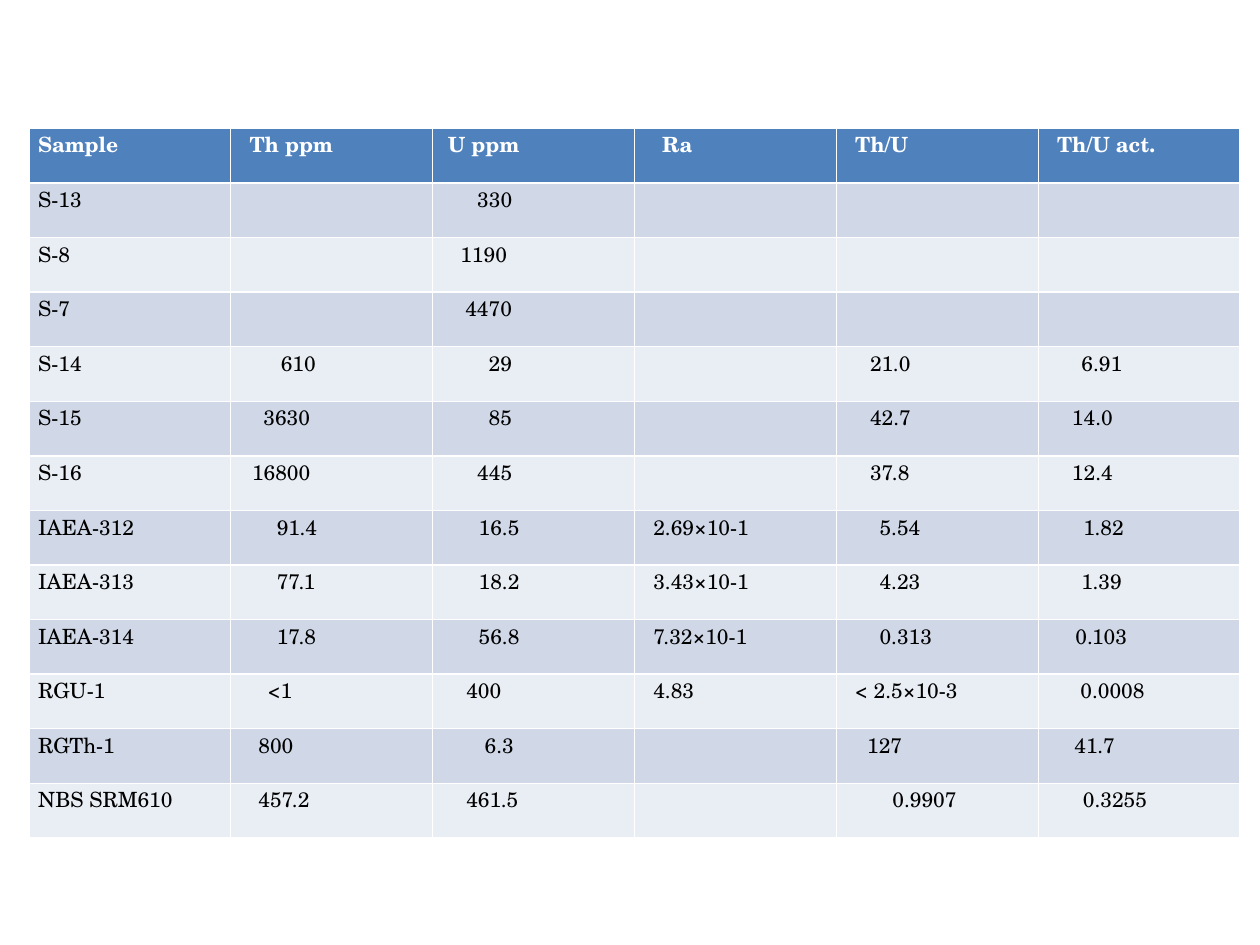
from pptx import Presentation
from pptx.dml.color import RGBColor
from pptx.enum.text import PP_ALIGN
from pptx.util import Cm, Pt

FONT = "TeX Gyre Schola"
HEADER_FILL = "4F81BD"
BAND_FILLS = ("E9EDF4", "D0D8E8")

# Each filled cell is (text, first-line indent in cm); None is an empty cell.
ROWS = [
    [("Sample", 0), ("Th ppm", 0.19), ("U ppm", 0.12), ("Ra", 0.37), ("Th/U", 0.19), ("Th/U act.", 0.19)],
    [("S-13", 0), None, ("330", 0.71), None, None, None],
    [("S-8", 0), None, ("1190", 0.37), None, None, None],
    [("S-7", 0), None, ("4470", 0.47), None, None, None],
    [("S-14", 0), ("610", 0.82), ("29", 0.94), None, ("21.0", 0.49), ("6.91", 0.68)],
    [("S-15", 0), ("3630", 0.47), ("85", 0.94), None, ("42.7", 0.49), ("14.0", 0.49)],
    [("S-16", 0), ("16800", 0.24), ("445", 0.71), None, ("37.8", 0.49), ("12.4", 0.49)],
    [("IAEA-312", 0), ("91.4", 0.74), ("16.5", 0.74), ("2.69×10-1", 0.19), ("5.54", 0.68), ("1.82", 0.72)],
    [("IAEA-313", 0), ("77.1", 0.74), ("18.2", 0.74), ("3.43×10-1", 0.19), ("4.23", 0.68), ("1.39", 0.68)],
    [("IAEA-314", 0), ("17.8", 0.74), ("56.8", 0.74), ("7.32×10-1", 0.19), ("0.313", 0.68), ("0.103", 0.56)],
    [("RGU-1", 0), ("<1", 0.56), ("400", 0.49), ("4.83", 0.19), ("< 2.5×10-3", 0.19), ("0.0008", 0.66)],
    [("RGTh-1", 0), ("800", 0.37), ("6.3", 0.86), None, ("127", 0.43), ("41.7", 0.54)],
    [("NBS SRM610", 0), ("457.2", 0.37), ("461.5", 0.49), None, ("0.9907", 0.94), ("0.3255", 0.71)],
]
LEFT, TOP = 0.58, 2.59
COLUMN_WIDTH, ROW_HEIGHT = 4.07, 1.1


def color(hex_code):
    return RGBColor.from_string(hex_code)


def fill_cell(cell, content, fill, is_header):
    cell.fill.solid()
    cell.fill.fore_color.rgb = color(fill)
    cell.margin_left = cell.margin_right = Cm(0.19)
    cell.margin_top = cell.margin_bottom = 0
    if content is None:
        return
    text, indent = content
    paragraph = cell.text_frame.paragraphs[0]
    paragraph.text = text
    paragraph.alignment = PP_ALIGN.JUSTIFY
    paragraph.line_spacing = Pt(18)
    if indent:
        paragraph_properties = paragraph._p.get_or_add_pPr()
        paragraph_properties.set("marL", "0")
        paragraph_properties.set("indent", str(Cm(indent)))
    font = paragraph.font
    font.name, font.size, font.bold = FONT, Pt(12), is_header
    font.color.rgb = color("FFFFFF" if is_header else "000000")


def main():
    presentation = Presentation()
    presentation.slide_width, presentation.slide_height = Cm(25.4), Cm(19.05)
    slide = presentation.slides.add_slide(presentation.slide_layouts[6])

    row_count, column_count = len(ROWS), len(ROWS[0])
    table = slide.shapes.add_table(
        row_count, column_count, Cm(LEFT), Cm(TOP),
        Cm(COLUMN_WIDTH * column_count), Cm(ROW_HEIGHT * row_count),
    ).table
    # The default table style supplies the white grid and the thick header rule.
    table.horz_banding = False
    for column in table.columns:
        column.width = Cm(COLUMN_WIDTH)

    for row_index, row in enumerate(ROWS):
        table.rows[row_index].height = Cm(ROW_HEIGHT)
        is_header = row_index == 0
        fill = HEADER_FILL if is_header else BAND_FILLS[row_index % 2]
        for column_index, content in enumerate(row):
            fill_cell(table.cell(row_index, column_index), content, fill, is_header)

    presentation.save("out.pptx")


if __name__ == "__main__":
    main()
